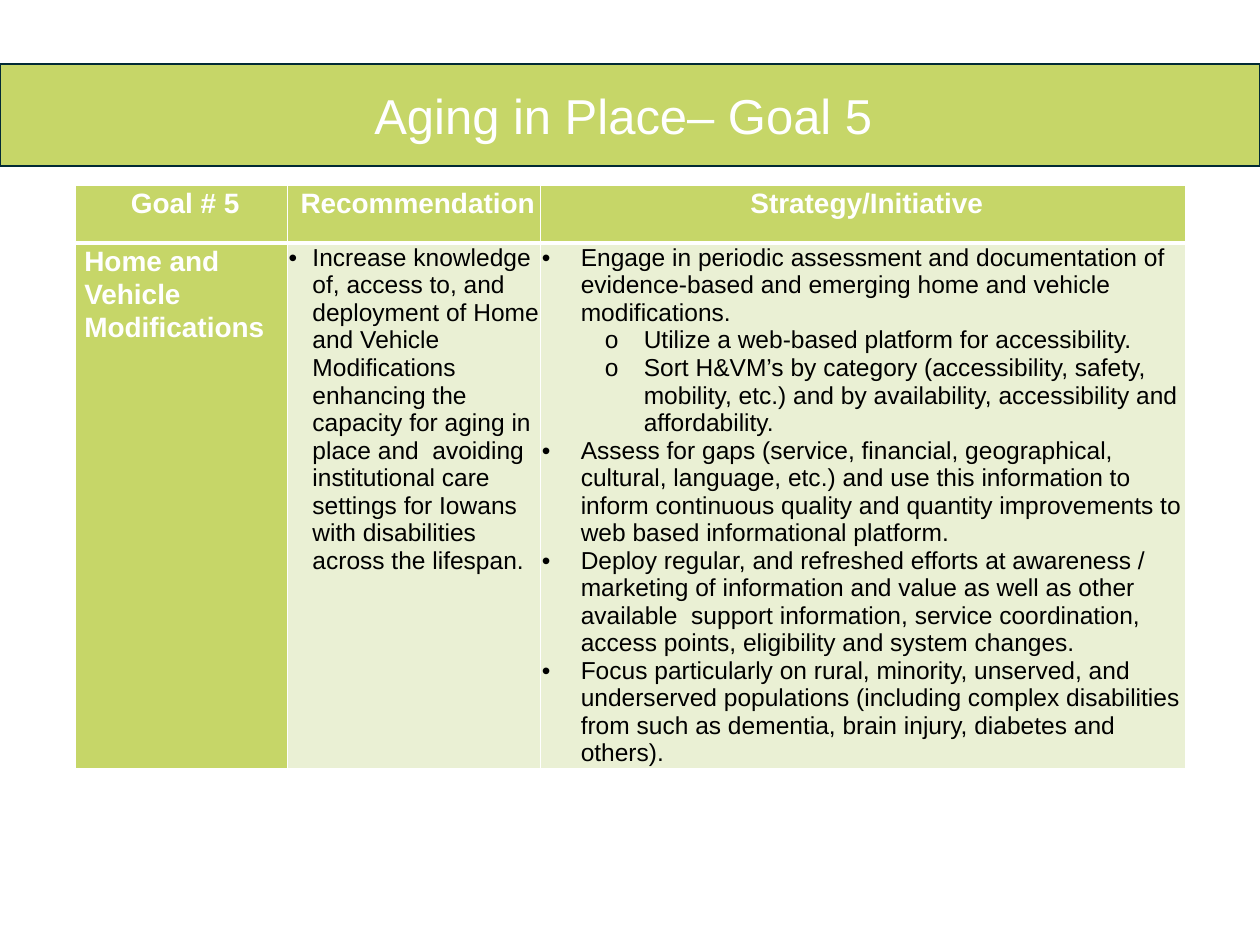
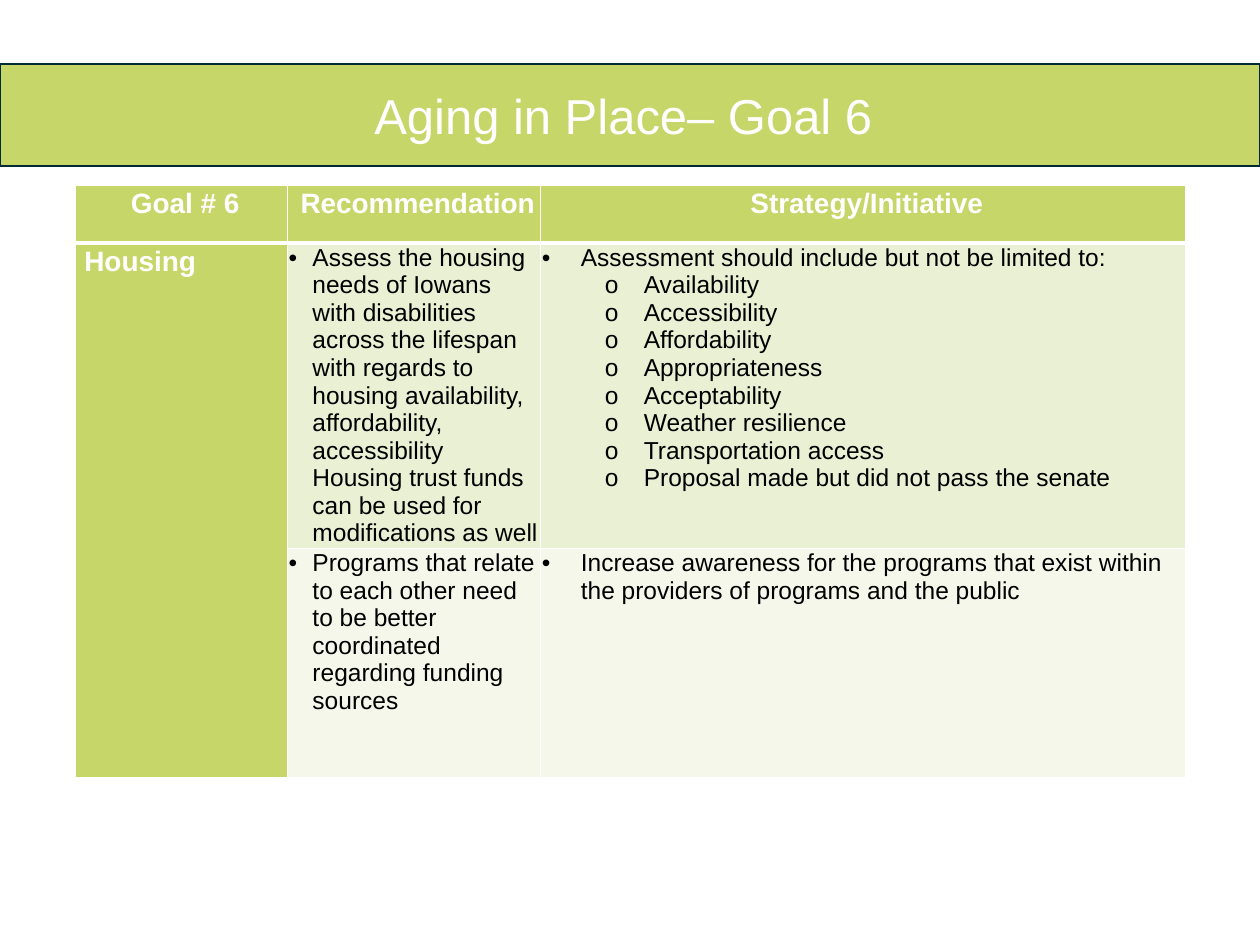
from dataclasses import dataclass
from lxml import etree
from pptx import Presentation
from pptx import util as u
from pptx.dml import color
from pptx.enum import shapes, text
from pptx.oxml import ns


@dataclass(frozen=True)
class Theme:
    """Colours, type sizes and line widths of the deck."""
    font: str = "Arial"
    lime: str = "C6D668"
    pale: str = "EAF0D4"
    faint: str = "F5F7EB"
    navy: str = "022B35"
    white: str = "FFFFFF"
    black: str = "000000"
    title: int = 28
    head: int = 16
    body: int = 14
    thin: int = 1
    thick: int = 3


THEME = Theme()
WIDTH, HEIGHT = u.Inches(10), u.Inches(7.5)
BAND_TOP, BAND_HIGH = 0.068, 0.108
GRID_LEFT, GRID_TOP = 0.06, 0.196
COLUMNS = (0.168, 0.201, 0.512)
HEAD_ROW = 0.061
HEADS = ("Recommendation", "Strategy/Initiative")
INSET = u.Inches(0.01)
PAD = 0.06
HANGS = (0.19, 0.31)
STEP = 0.5

GOALS = [
    (5, "Home and Vehicle Modifications", [
        (0.556,
         [(0, "Increase knowledge of, access to, and deployment of Home and "
              "Vehicle Modifications enhancing the capacity for aging in place "
              "and  avoiding institutional care settings for Iowans with "
              "disabilities across the lifespan.")],
         [(0, "Engage in periodic assessment and documentation of "
              "evidence-based and emerging home and vehicle modifications."),
          (1, "Utilize a web-based platform for accessibility."),
          (1, "Sort H&VM’s by category (accessibility, safety, mobility, "
              "etc.) and by availability, accessibility and affordability."),
          (0, "Assess for gaps (service, financial, geographical, cultural, "
              "language, etc.) and use this information to inform continuous "
              "quality and quantity improvements to web based informational "
              "platform."),
          (0, "Deploy regular, and refreshed efforts at awareness / marketing "
              "of information and value as well as other available  support "
              "information, service coordination, access points, eligibility "
              "and system changes."),
          (0, "Focus particularly on rural, minority, unserved, and "
              "underserved populations (including complex disabilities from "
              "such as dementia, brain injury, diabetes and others).")]),
    ]),
    (6, "Housing", [
        (0.322,
         [(0, "Assess the housing needs of Iowans with disabilities across the "
              "lifespan with regards to housing availability, affordability, "
              "accessibility Housing trust funds can be used for "
              "modifications as well")],
         [(0, "Assessment should include but not be limited to:"),
          (1, "Availability"),
          (1, "Accessibility"),
          (1, "Affordability"),
          (1, "Appropriateness"),
          (1, "Acceptability"),
          (1, "Weather resilience"),
          (1, "Transportation access"),
          (1, "Proposal made but did not pass the senate")]),
        (0.243,
         [(0, "Programs that relate to each other need to be better "
              "coordinated regarding funding sources")],
         [(0, "Increase awareness for the programs that exist within the "
              "providers of programs and the public")]),
    ]),
]


def rgb(code):
    """Return a colour from its hex code."""
    return color.RGBColor.from_string(code)


def style(para, size, tint, bold=False):
    """Set the font of a whole paragraph."""
    font = para.font
    font.name, font.size, font.bold = THEME.font, u.Pt(size), bold
    font.color.rgb = rgb(tint)


def indent(para, left, hang=0):
    """Set the left margin and hanging indent in inches."""
    props = para._p.get_or_add_pPr()
    props.set("marL", str(u.Inches(left)))
    props.set("indent", str(u.Inches(-hang)))
    return props


def band(slide, title):
    """Draw the full-width title band."""
    box = slide.shapes.add_shape(
        shapes.MSO_SHAPE.RECTANGLE, 0, int(HEIGHT * BAND_TOP),
        WIDTH, int(HEIGHT * BAND_HIGH))
    box.shadow.inherit = False
    box.fill.solid()
    box.fill.fore_color.rgb = rgb(THEME.lime)
    box.line.color.rgb = rgb(THEME.navy)
    box.line.width = u.Pt(THEME.thin)
    box.text_frame.vertical_anchor = text.MSO_ANCHOR.MIDDLE
    para = box.text_frame.paragraphs[0]
    para.text = title
    para.alignment = text.PP_ALIGN.CENTER
    style(para, THEME.title, THEME.white)


def edge(cell, side, width):
    """Add a white border to one side of a cell."""
    line = etree.SubElement(cell._tc.get_or_add_tcPr(),
                            ns.qn(f"a:ln{side}"), w=str(u.Pt(width)))
    fill = etree.SubElement(line, ns.qn("a:solidFill"))
    etree.SubElement(fill, ns.qn("a:srgbClr"), val=THEME.white)


def dress(cell, row, tint):
    """Set the insets, borders and fill of a cell."""
    cell.margin_left = cell.margin_right = INSET
    cell.margin_top = cell.margin_bottom = INSET
    widths = {"L": THEME.thin, "R": THEME.thin,
              "T": THEME.thick if row == 1 else THEME.thin,
              "B": THEME.thick if row == 0 else THEME.thin}
    for side, width in widths.items():
        edge(cell, side, width)
    cell.fill.solid()
    cell.fill.fore_color.rgb = rgb(tint)


def label(cell, words, align=text.PP_ALIGN.LEFT):
    """Write a bold white heading in a cell."""
    para = cell.text_frame.paragraphs[0]
    para.text = words
    para.alignment = align
    para.line_spacing = 1.07
    indent(para, PAD)
    style(para, THEME.head, THEME.white, True)


def points(cell, items, hang):
    """Write a two-level bulleted list in a cell."""
    frame = cell.text_frame
    for i, (level, words) in enumerate(items):
        para = frame.add_paragraph() if i else frame.paragraphs[0]
        para.text = words
        para.level = level
        props = indent(para, hang + level * STEP, hang)
        etree.SubElement(props, ns.qn("a:buFont"), typeface=THEME.font)
        etree.SubElement(props, ns.qn("a:buChar"), char="•o"[level])
        style(para, THEME.body, THEME.black)


def grid(slide, number, topic, plans):
    """Draw the table of one goal."""
    highs = [HEAD_ROW] + [plan[0] for plan in plans]
    table = slide.shapes.add_table(
        len(highs), len(COLUMNS), int(WIDTH * GRID_LEFT),
        int(HEIGHT * GRID_TOP), int(WIDTH * sum(COLUMNS)),
        int(HEIGHT * sum(highs))).table
    table.first_row = table.horz_banding = False
    for column, share in zip(table.columns, COLUMNS):
        column.width = int(WIDTH * share)
    for r, share in enumerate(highs):
        table.rows[r].height = int(HEIGHT * share)
        shade = THEME.pale if r % 2 else THEME.faint
        for c in range(len(COLUMNS)):
            dress(table.cell(r, c), r, shade if r and c else THEME.lime)
    for c, words in enumerate((f"Goal # {number}", *HEADS)):
        label(table.cell(0, c), words, text.PP_ALIGN.CENTER)
    if len(plans) > 1:
        table.cell(1, 0).merge(table.cell(len(plans), 0))
    label(table.cell(1, 0), topic)
    for r, (_, *lists) in enumerate(plans, 1):
        for c, (items, hang) in enumerate(zip(lists, HANGS), 1):
            points(table.cell(r, c), items, hang)


def main():
    """Build and save the deck."""
    deck = Presentation()
    deck.slide_width, deck.slide_height = WIDTH, HEIGHT
    for number, topic, plans in GOALS:
        slide = deck.slides.add_slide(deck.slide_layouts[6])
        grid(slide, number, topic, plans)
        band(slide, f"Aging in Place– Goal {number} ")
    deck.save("out.pptx")


if __name__ == "__main__":
    main()
